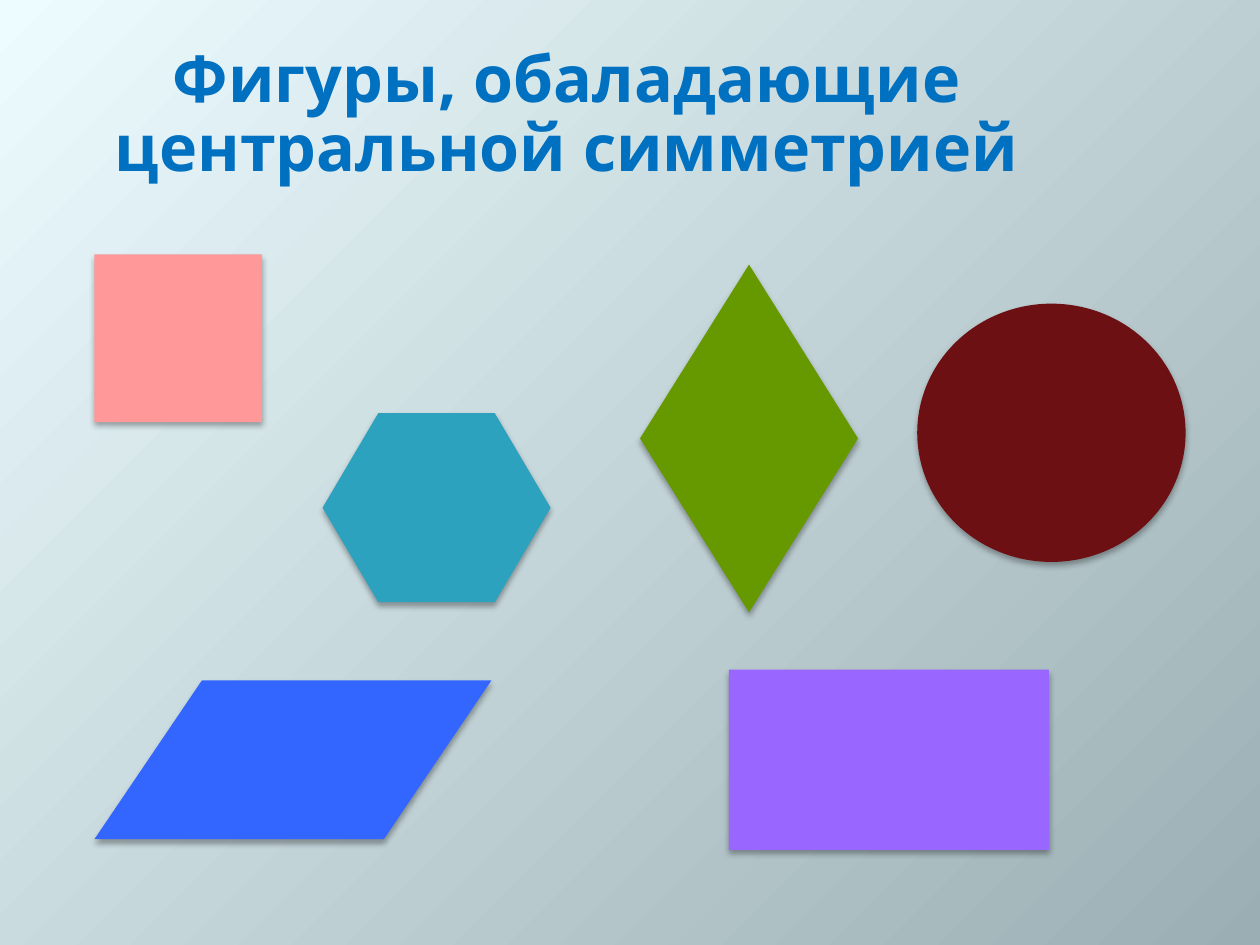
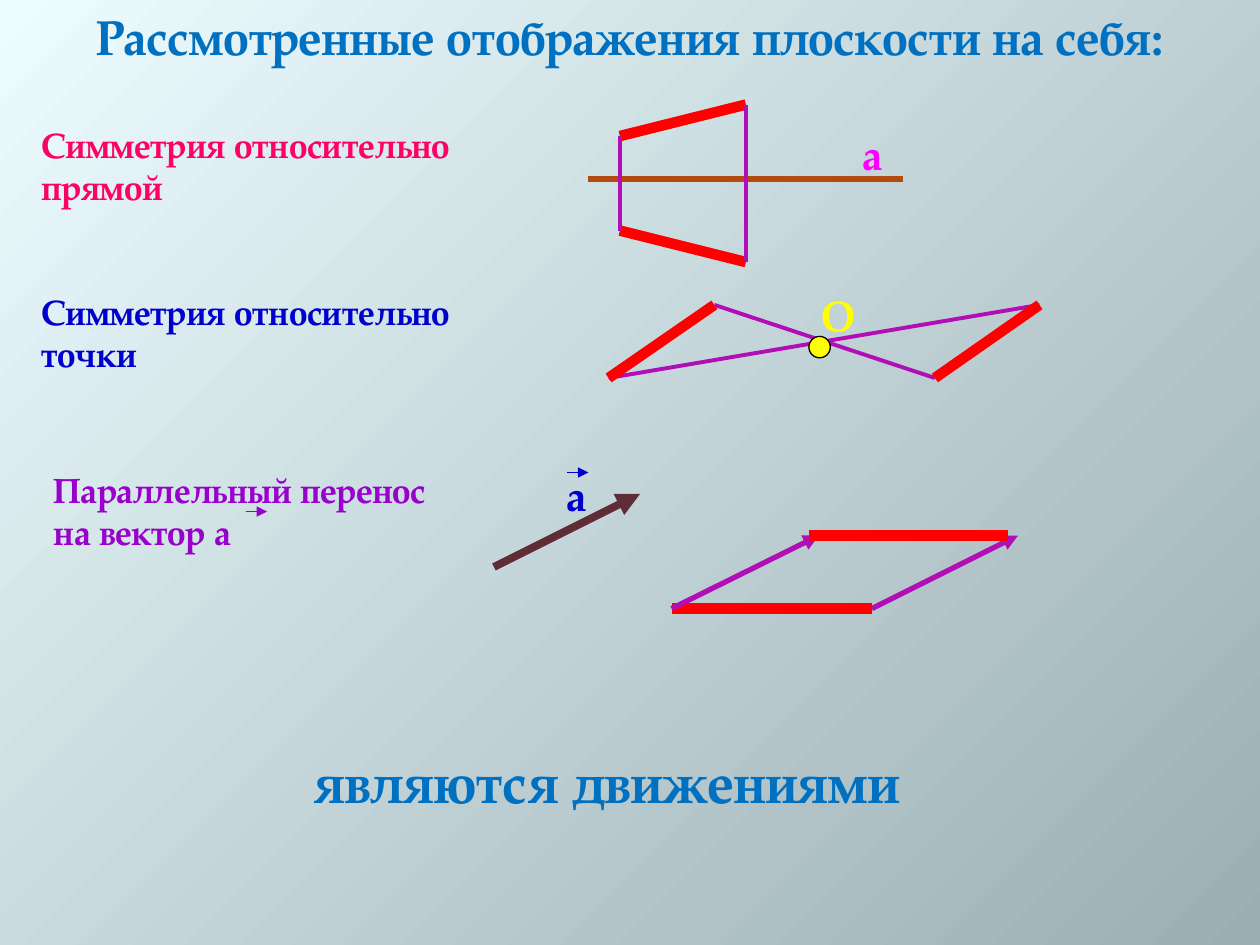
from typing import NamedTuple

from lxml.etree import SubElement
from pptx import Presentation
from pptx.dml.color import RGBColor
from pptx.enum.shapes import MSO_CONNECTOR, MSO_SHAPE as Preset
from pptx.enum.text import MSO_ANCHOR as Anchor, MSO_AUTO_SIZE as AutoSize, PP_ALIGN as Align
from pptx.oxml.ns import qn
from pptx.slide import Slide
from pptx.text.text import TextFrame
from pptx.util import Inches, Pt

SANS = "Open Sans"
SERIF = "TeX Gyre Pagella"

PALE = RGBColor(0xED, 0xFC, 0xFF)
SLATE = RGBColor(0x9B, 0xAE, 0xB3)
HEADING = RGBColor(0x00, 0x70, 0xC0)
BLACK = RGBColor(0x00, 0x00, 0x00)
SALMON = RGBColor(0xFF, 0x99, 0x99)
TEAL = RGBColor(0x2D, 0xA2, 0xBF)
BLUE = RGBColor(0x33, 0x66, 0xFF)
GREEN = RGBColor(0x66, 0x99, 0x00)
VIOLET = RGBColor(0x99, 0x66, 0xFF)
MAROON = RGBColor(0x6D, 0x10, 0x14)
PINK = RGBColor(0xFF, 0x00, 0x66)
MAGENTA = RGBColor(0xFF, 0x00, 0xFF)
NAVY = RGBColor(0x00, 0x00, 0xCC)
PURPLE = RGBColor(0x99, 0x00, 0xCC)
ORCHID = RGBColor(0xB1, 0x0F, 0xB5)
RED = RGBColor(0xFF, 0x00, 0x00)
BROWN = RGBColor(0xB5, 0x4A, 0x10)
PLUM = RGBColor(0x5E, 0x2D, 0x37)
YELLOW = RGBColor(0xFF, 0xFF, 0x00)

Point = tuple[float, float]
Box = tuple[float, float, float, float]


class Figure(NamedTuple):
    preset: Preset
    box: Box
    fill: RGBColor
    adjustment: float | None = None
    rotation: float = 0
    outline: RGBColor | None = None
    shadow: bool = True


class Segment(NamedTuple):
    start: Point
    end: Point
    color: RGBColor
    width: float
    arrow: bool = False


class Label(NamedTuple):
    text: str
    box: Box
    color: RGBColor
    size: float = 20
    wrap: bool = False


FIGURES = [
    Figure(Preset.RECTANGLE, (0.75, 2.02, 1.33, 1.33), SALMON),
    Figure(Preset.HEXAGON, (2.56, 3.28, 1.81, 1.5), TEAL, 0.295),
    Figure(Preset.PARALLELOGRAM, (0.75, 5.4, 3.15, 1.26), BLUE, 0.677),
    Figure(Preset.DIAMOND, (5.08, 2.1, 1.73, 2.76), GREEN),
    Figure(Preset.RECTANGLE, (6.34, 4.76, 1.43, 2.54), VIOLET, rotation=90),
    Figure(Preset.OVAL, (7.28, 2.41, 2.13, 2.05), MAROON),
]

CENTRE_DOT = Figure(Preset.OVAL, (6.42, 2.67, 0.17, 0.17), YELLOW, outline=BLACK, shadow=False)

LABELS = [
    Label("Симметрия относительно\nпрямой", (0.23, 0.93, 4.1, 0.77), PINK),
    Label("а", (6.75, 0.97, 0.4, 0.5), MAGENTA, 24),
    Label("Симметрия относительно\nточки", (0.23, 2.26, 4.17, 0.77), NAVY),
    Label("О", (6.42, 2.25, 0.33, 0.5), YELLOW, 24, wrap=True),
    Label("Параллельный перенос\nна вектор а", (0.33, 3.67, 3.81, 0.77), PURPLE),
    Label("а", (4.4, 3.68, 0.4, 0.5), NAVY, 24),
    Label("являются движениями", (2.4, 5.88, 4.87, 0.64), HEADING, 32),
]


def line_symmetry() -> list[Segment]:
    left, right = 4.92, 5.92
    upper_left, upper_right = (left, 1.08), (right, 0.83)
    lower_left, lower_right = (left, 1.83), (right, 2.08)
    return [
        Segment((4.67, 1.42), (7.17, 1.42), BROWN, 3),
        Segment(upper_left, upper_right, RED, 6),
        Segment(lower_left, lower_right, RED, 6),
        Segment(upper_left, lower_left, ORCHID, 2.25),
        Segment(upper_right, lower_right, ORCHID, 2.25),
    ]


def point_symmetry() -> list[Segment]:
    top, bottom = 2.42, 3
    left_top, left_bottom = (5.67, top), (4.83, bottom)
    right_top, right_bottom = (8.25, top), (7.42, bottom)
    return [
        Segment(left_bottom, right_top, ORCHID, 2.25),
        Segment(left_top, right_bottom, ORCHID, 2.25),
        Segment(left_top, left_bottom, RED, 6),
        Segment(right_top, right_bottom, RED, 6),
    ]


def translation() -> list[Segment]:
    top, bottom = 4.25, 4.83
    start, end = (5.33, bottom), (6.92, bottom)
    return [
        Segment((1.95, 4.06), (2.12, 4.06), PURPLE, 0.75, arrow=True),
        Segment((4.5, 3.75), (4.67, 3.75), NAVY, 0.75, arrow=True),
        Segment((3.92, 4.5), (5.08, 3.92), PLUM, 4.5, arrow=True),
        Segment(start, end, RED, 6),
        Segment(end, (8.08, top), ORCHID, 3, arrow=True),
        Segment(start, (6.5, top), ORCHID, 3, arrow=True),
        Segment((6.42, top), (8, top), RED, 6),
    ]


def write_text(frame: TextFrame, text: str, *, font: str, size: float, color: RGBColor,
               align: Align = Align.LEFT, anchor: Anchor = Anchor.TOP, wrap: bool = True,
               auto_size: AutoSize = AutoSize.NONE, line_spacing: float = 1.0) -> None:
    """Fill the frame with one bold paragraph, turning newlines into line breaks."""
    frame.word_wrap = wrap
    frame.auto_size = auto_size
    frame.vertical_anchor = anchor
    paragraph = frame.paragraphs[0]
    paragraph.alignment = align
    paragraph.line_spacing = line_spacing
    for index, line in enumerate(text.split("\n")):
        if index:
            paragraph.add_line_break()
        run = paragraph.add_run()
        run.text = line
        run.font.name = font
        run.font.size = Pt(size)
        run.font.bold = True
        run.font.color.rgb = color


def add_titled_slide(presentation: Presentation, title: str, box: Box, **text_format) -> Slide:
    slide = presentation.slides.add_slide(presentation.slide_layouts.get_by_name("Title Only"))
    shape = slide.shapes.title
    shape.left, shape.top, shape.width, shape.height = map(Inches, box)
    write_text(shape.text_frame, title, color=HEADING, align=Align.CENTER, **text_format)
    return slide


def add_figure(slide: Slide, figure: Figure) -> None:
    shape = slide.shapes.add_shape(figure.preset, *map(Inches, figure.box))
    shape.rotation = figure.rotation
    shape.fill.solid()
    shape.fill.fore_color.rgb = figure.fill
    if figure.adjustment is not None:
        shape.adjustments[0] = figure.adjustment
    if figure.outline is None:
        shape.line.fill.background()
    else:
        shape.line.color.rgb = figure.outline
        shape.line.width = Pt(0.75)
    shape.shadow.inherit = False
    if figure.shadow:
        effects = shape._element.spPr.find(qn("a:effectLst"))
        shadow = SubElement(effects, qn("a:outerShdw"), blurRad=str(Pt(3.5)), dist=str(Pt(2.2)),
                            dir="5400000", rotWithShape="0")
        color = SubElement(shadow, qn("a:srgbClr"), val=str(BLACK))
        SubElement(color, qn("a:alpha"), val="32000")


def add_segment(slide: Slide, segment: Segment) -> None:
    connector = slide.shapes.add_connector(
        MSO_CONNECTOR.STRAIGHT, *map(Inches, segment.start + segment.end))
    connector.line.color.rgb = segment.color
    connector.line.width = Pt(segment.width)
    if segment.arrow:
        SubElement(connector.line._get_or_add_ln(), qn("a:tailEnd"), type="triangle")
    SubElement(connector._element.spPr, qn("a:effectLst"))


def add_label(slide: Slide, label: Label) -> None:
    box = slide.shapes.add_textbox(*map(Inches, label.box))
    write_text(box.text_frame, label.text, font=SERIF, size=label.size, color=label.color,
               wrap=label.wrap, auto_size=AutoSize.SHAPE_TO_FIT_TEXT)


def set_background(presentation: Presentation) -> None:
    fill = presentation.slide_master.background.fill
    fill.gradient()
    fill.gradient_angle = 315
    for stop, color in zip(fill.gradient_stops, (PALE, SLATE)):
        stop.color.rgb = color


def build_central_symmetry(presentation: Presentation) -> None:
    slide = add_titled_slide(
        presentation, "Фигуры, обаладающие центральной симметрией", (0, 0.3, 9, 1.25),
        font=SANS, size=36.9, anchor=Anchor.MIDDLE, line_spacing=0.89)
    for figure in FIGURES:
        add_figure(slide, figure)


def build_motions(presentation: Presentation) -> None:
    slide = add_titled_slide(
        presentation, "Рассмотренные отображения плоскости на себя:", (0, 0, 10, 0.57),
        font=SERIF, size=28, auto_size=AutoSize.SHAPE_TO_FIT_TEXT)
    for segment in line_symmetry() + point_symmetry() + translation():
        add_segment(slide, segment)
    add_figure(slide, CENTRE_DOT)
    for label in LABELS:
        add_label(slide, label)


def main() -> None:
    presentation = Presentation()
    presentation.slide_width, presentation.slide_height = Inches(10), Inches(7.5)
    set_background(presentation)
    build_central_symmetry(presentation)
    build_motions(presentation)
    presentation.save("out.pptx")


if __name__ == "__main__":
    main()
